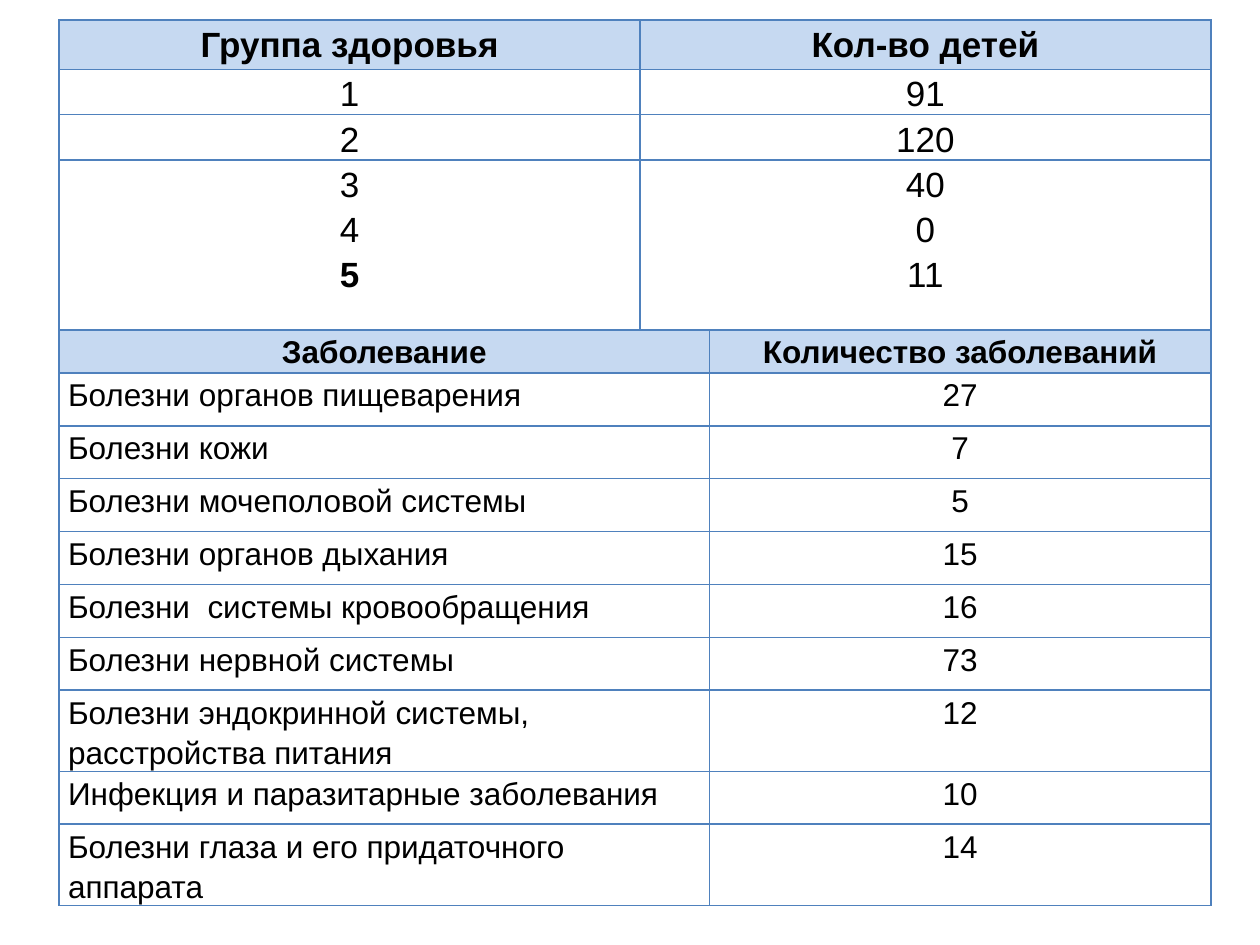
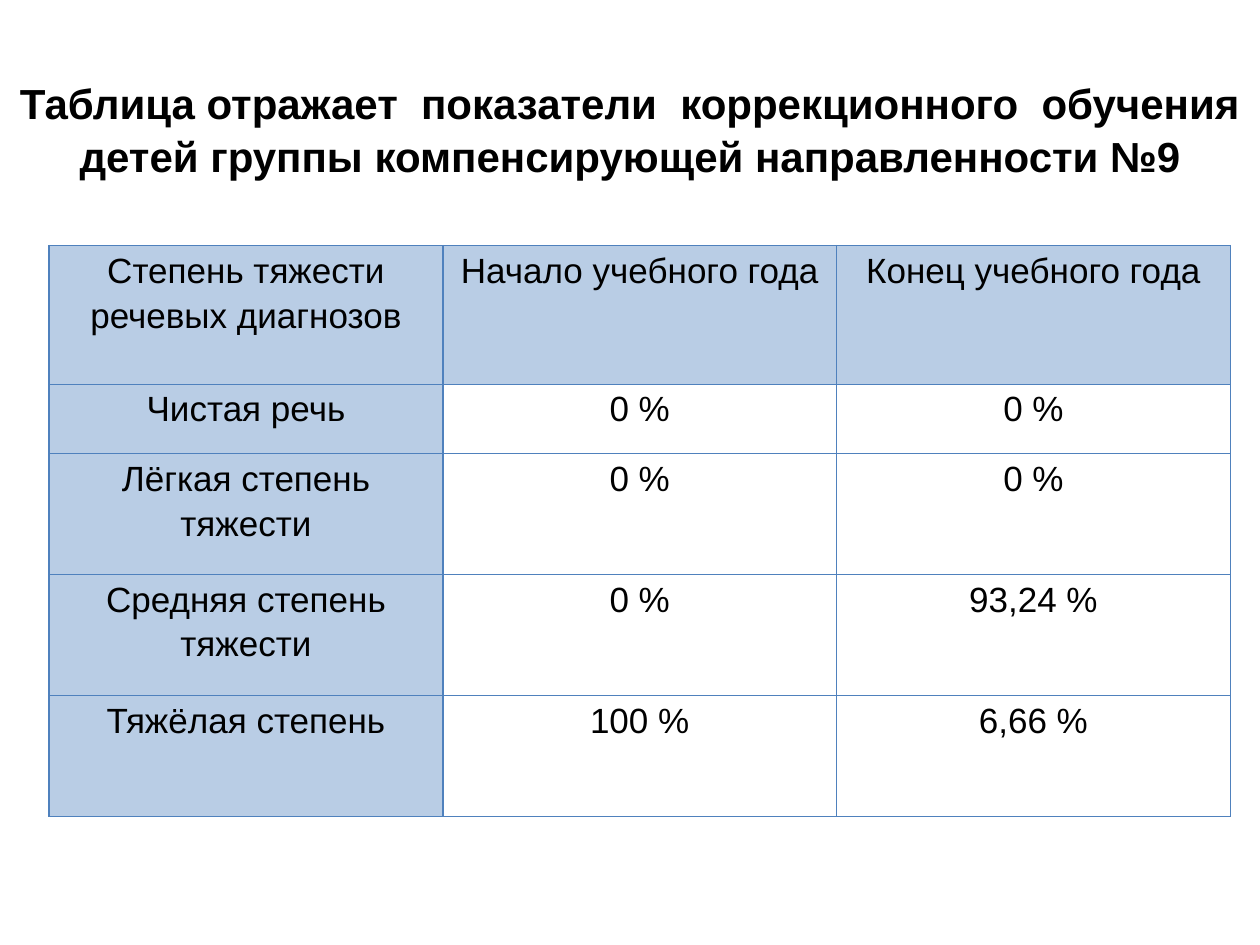
import pptx
import pptx.util
import pptx.dml.color
import pptx.enum.text
import pptx.oxml.ns
from lxml import etree

Inches = pptx.util.Inches
Pt = pptx.util.Pt
ALIGN = pptx.enum.text.PP_ALIGN
ANCHOR = pptx.enum.text.MSO_ANCHOR

FONT = "Arial"
TEXT_COLOR = "000000"
BORDER_COLOR = "4F81BD"
LIGHT_BLUE = "C6D9F1"
MID_BLUE = "B9CDE5"

HEALTH_GROUPS = [
    ("Группа здоровья", "Кол-во детей"),
    ("1", "91"),
    ("2", "120"),
    ("3\n4\n5", "40\n0\n11"),
]
DISEASES = [
    ("Заболевание", "Количество заболеваний"),
    ("Болезни органов пищеварения", "27"),
    ("Болезни кожи", "7"),
    ("Болезни мочеполовой системы", "5"),
    ("Болезни органов дыхания", "15"),
    ("Болезни  системы кровообращения", "16"),
    ("Болезни нервной системы", "73"),
    ("Болезни эндокринной системы, расстройства питания", "12"),
    ("Инфекция и паразитарные заболевания", "10"),
    ("Болезни глаза и его придаточного аппарата", "14"),
]
SPEECH_RESULTS = [
    ("Степень тяжести речевых диагнозов", "Начало учебного года", "Конец учебного года"),
    ("Чистая речь", "0 %", "0 %"),
    ("Лёгкая степень тяжести", "0 %", "0 %"),
    ("Средняя степень тяжести", "0 %", "93,24 %"),
    ("Тяжёлая степень", "100 %", "6,66 %"),
]
SPEECH_TITLE = (
    "Таблица отражает  показатели  коррекционного  обучения\v"
    "детей группы компенсирующей направленности №9"
)


def color(value):
    return pptx.dml.color.RGBColor.from_string(value)


def set_values(target, values):
    for name, value in values.items():
        setattr(target, name, value)


def format_text(text_frame, size, bold=False, align=ALIGN.CENTER, spacing=1.15):
    for paragraph in text_frame.paragraphs:
        set_values(paragraph, {"alignment": align, "line_spacing": spacing})
        for run in paragraph.runs:
            set_values(run.font, {"name": FONT, "size": Pt(size), "bold": bold})
            run.font.color.rgb = color(TEXT_COLOR)


def add_borders(cell):
    properties = cell._tc.get_or_add_tcPr()
    qn = pptx.oxml.ns.qn
    for side in ("a:lnL", "a:lnR", "a:lnT", "a:lnB"):
        line = etree.SubElement(properties, qn(side), w=str(Pt(1)))
        fill = etree.SubElement(line, qn("a:solidFill"))
        etree.SubElement(fill, qn("a:srgbClr"), val=BORDER_COLOR)


def add_grid(slide, box, rows, widths, heights, size, fill,
             bold_header=True, fill_first_column=False, label_align=ALIGN.CENTER):
    """Add a bordered table at box (left, top) with a filled header row."""
    left, top = box
    frame = slide.shapes.add_table(
        len(rows), len(widths), Inches(left), Inches(top),
        Inches(sum(widths)), Inches(sum(heights)))
    table = frame.table
    set_values(table, {"first_row": False, "horz_banding": False})
    for column, width in zip(table.columns, widths):
        column.width = Inches(width)
    for row, height in zip(table.rows, heights):
        row.height = Inches(height)

    for row_index, texts in enumerate(rows):
        for column_index, text in enumerate(texts):
            header, label = row_index == 0, column_index == 0
            cell = table.cell(row_index, column_index)
            cell.text = text
            set_values(cell, {
                "margin_left": Inches(0.07), "margin_right": Inches(0.07),
                "margin_top": 0, "margin_bottom": 0})
            align = label_align if label and not header else ALIGN.CENTER
            format_text(cell.text_frame, size, header and bold_header, align)
            add_borders(cell)
            if header or (label and fill_first_column):
                cell.fill.solid()
                cell.fill.fore_color.rgb = color(fill)
            else:
                cell.fill.background()
    return table


def add_title(slide, box, text):
    title = slide.shapes.add_textbox(*map(Inches, box))
    text_frame = title.text_frame
    set_values(text_frame, {
        "word_wrap": True, "vertical_anchor": ANCHOR.MIDDLE,
        "margin_bottom": Inches(0.37)})
    text_frame.paragraphs[0].text = text
    format_text(text_frame, 24, bold=True, spacing=1.05)


def add_health_slide(presentation):
    slide = presentation.slides.add_slide(presentation.slide_layouts[6])
    left, top = 0.47, 0.16
    group_heights = [0.39, 0.36, 0.36, 1.35]
    groups = add_grid(slide, (left, top), HEALTH_GROUPS, [4.61, 4.53],
                      group_heights, 20, LIGHT_BLUE)
    last_group = groups.cell(3, 0).text_frame.paragraphs[-1]
    last_group.runs[0].font.bold = True

    one_line, two_lines = 0.42, 0.64
    disease_heights = [0.34] + [one_line] * 6 + [two_lines, one_line, two_lines]
    add_grid(slide, (left, top + sum(group_heights)), DISEASES, [5.16, 3.98],
             disease_heights, 18, LIGHT_BLUE, label_align=ALIGN.LEFT)


def add_speech_slide(presentation):
    slide = presentation.slides.add_slide(presentation.slide_layouts[6])
    add_title(slide, (0, 0.39, 10, 1.57), SPEECH_TITLE)
    add_grid(slide, (0.39, 1.95), SPEECH_RESULTS, [3.125] * 3,
             [1.1, 0.55] + [0.96] * 3, 20, MID_BLUE,
             bold_header=False, fill_first_column=True)


def main():
    presentation = pptx.Presentation()
    set_values(presentation, {"slide_width": Inches(10), "slide_height": Inches(7.5)})
    add_health_slide(presentation)
    add_speech_slide(presentation)
    presentation.save("out.pptx")


if __name__ == "__main__":
    main()
